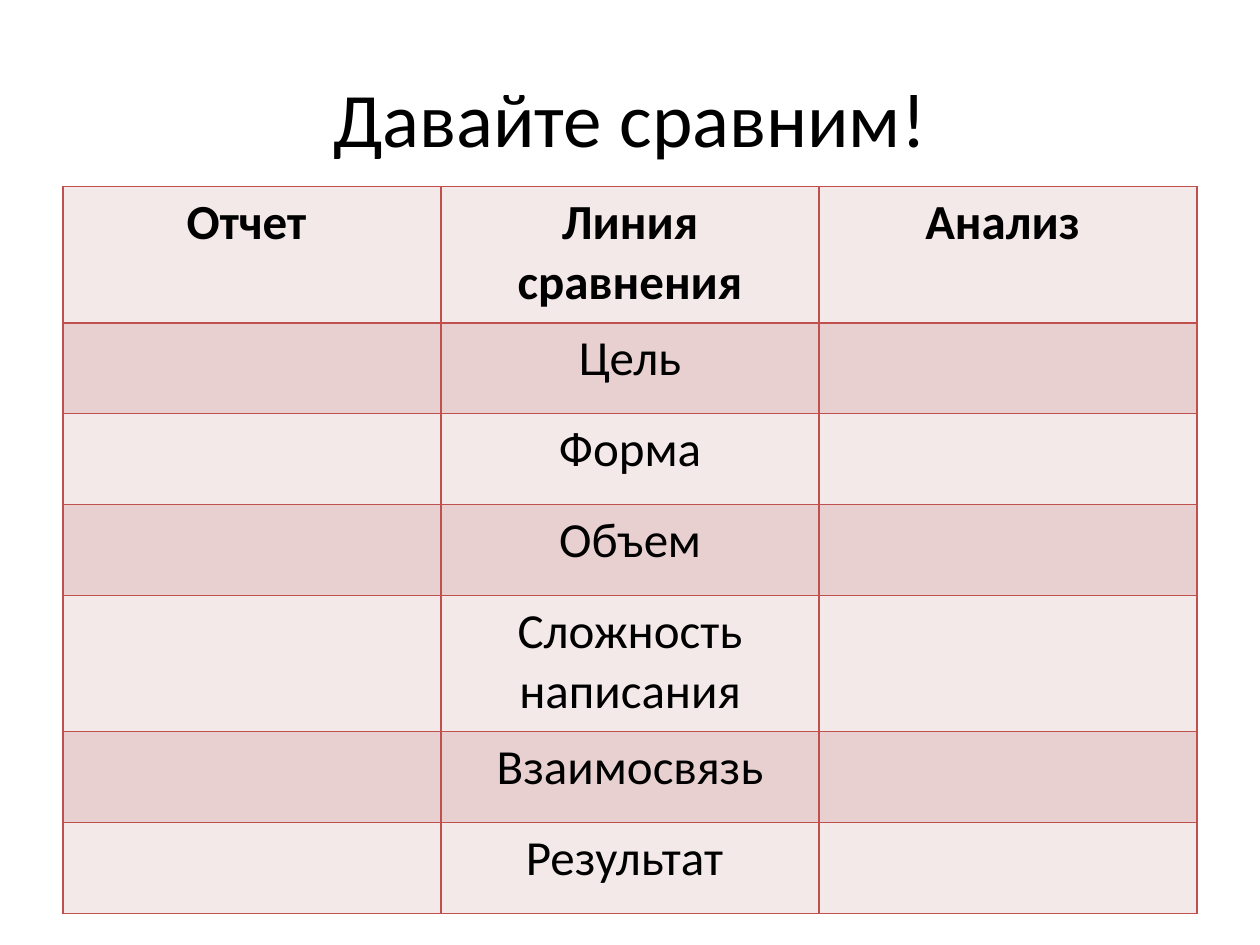
from lxml import etree
from pptx import Presentation
from pptx.dml.color import RGBColor
from pptx.enum.text import MSO_ANCHOR, PP_ALIGN
from pptx.oxml.ns import qn
from pptx.util import Cm, Pt

CENTER = PP_ALIGN.CENTER
MIDDLE = MSO_ANCHOR.MIDDLE

TITLE = "Давайте сравним!"
ROWS = [
    ("Отчет ", "Линия сравнения", "Анализ "),
    ("", "Цель", ""),
    ("", "Форма", ""),
    ("", "Объем", ""),
    ("", "Сложность написания", ""),
    ("", "Взаимосвязь", ""),
    ("", "Результат ", ""),
]
TALL_ROWS = (0, 4)
TALL, SHORT = 2.75, 1.83
COLUMN_WIDTH = 7.62
BANDS = ("F4E9E9", "E8D0D0")
BORDER = "C0504D"
BLACK = "000000"
FONT = "Calibri"


def color(value):
    """Turn a hex string into a colour."""
    return RGBColor.from_string(value)


def format_paragraph(paragraph, size, bold=False):
    """Centre a paragraph and set its font."""
    paragraph.alignment = CENTER
    font = paragraph.font
    font.name, font.size, font.bold = FONT, Pt(size), bold
    font.color.rgb = color(BLACK)


def add_borders(cell):
    """Draw a thin line on every side of a cell."""
    properties = cell._tc.get_or_add_tcPr()
    for side in ("a:lnL", "a:lnR", "a:lnT", "a:lnB"):
        line = etree.SubElement(properties, qn(side), w=str(Pt(1)))
        fill = etree.SubElement(line, qn("a:solidFill"))
        etree.SubElement(fill, qn("a:srgbClr"), val=BORDER)


def add_title(page):
    """Place and format the title."""
    title = page.shapes.title
    title.left, title.top = Cm(1.27), Cm(0.76)
    title.width, title.height = Cm(22.86), Cm(3.18)
    title.text_frame.text = TITLE
    title.text_frame.vertical_anchor = MIDDLE
    format_paragraph(title.text_frame.paragraphs[0], 44)


def add_comparison(page):
    """Build the banded comparison table."""
    heights = [TALL if index in TALL_ROWS else SHORT for index in range(len(ROWS))]
    columns = len(ROWS[0])
    table = page.shapes.add_table(
        len(ROWS), columns, Cm(1.27), Cm(3.76),
        Cm(COLUMN_WIDTH * columns), Cm(sum(heights)),
    ).table
    for column in table.columns:
        column.width = Cm(COLUMN_WIDTH)
    for row_index, texts in enumerate(ROWS):
        table.rows[row_index].height = Cm(heights[row_index])
        for column_index, text in enumerate(texts):
            cell = table.cell(row_index, column_index)
            add_borders(cell)
            cell.fill.solid()
            cell.fill.fore_color.rgb = color(BANDS[row_index % 2])
            cell.text = text
            format_paragraph(cell.text_frame.paragraphs[0], 28, row_index == 0)


def main():
    """Build and save the deck."""
    deck = Presentation()
    deck.slide_width, deck.slide_height = Cm(25.4), Cm(19.05)
    page = deck.slides.add_slide(deck.slide_layouts[5])
    add_title(page)
    add_comparison(page)
    deck.save("out.pptx")


if __name__ == "__main__":
    main()
